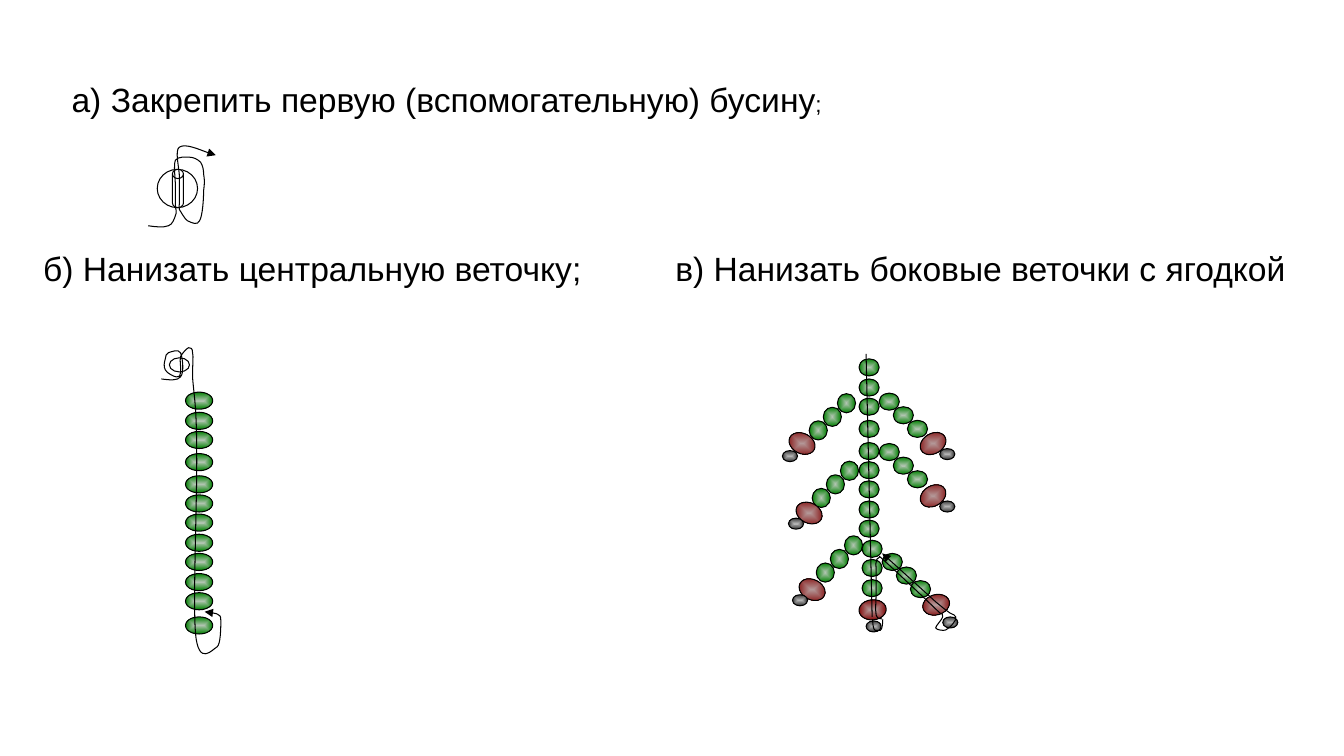
from lxml.etree import SubElement
from pptx import Presentation
from pptx.dml.color import RGBColor
from pptx.enum.shapes import MSO_CONNECTOR, MSO_SHAPE
from pptx.enum.text import MSO_ANCHOR, PP_ALIGN
from pptx.oxml.ns import qn
from pptx.util import Inches, Pt

BLACK, WHITE = "000000", "FFFFFF"
# Bead colours: rim, and tint of the centre in percent
GREEN, RED, GREY = ("008000", 57), ("800000", 70), ("333333", 57)

# Curves: a start point, then two control points and an end point per segment
FIRST_BEAD_WIRE = [
    (1.47, 2.24), (1.54, 2.25), (1.62, 2.26), (1.67, 2.24), (1.71, 2.23), (1.73, 2.17), (1.74, 2.14),
    (1.76, 2.1), (1.74, 2.08), (1.74, 2.03), (1.74, 1.98), (1.74, 1.91), (1.74, 1.84),
    (1.74, 1.77), (1.72, 1.64), (1.74, 1.59), (1.77, 1.55), (1.84, 1.56), (1.88, 1.56),
    (1.92, 1.56), (1.96, 1.58), (1.99, 1.61), (2.01, 1.64), (2.02, 1.68), (2.02, 1.73),
    (2.03, 1.78), (2.03, 1.82), (2.02, 1.89), (2.02, 1.97), (2.01, 2.14), (1.98, 2.19),
    (1.96, 2.24), (1.9, 2.21), (1.86, 2.19), (1.83, 2.17), (1.8, 2.11), (1.78, 2.08),
    (1.77, 2.05), (1.78, 2.05), (1.78, 2), (1.78, 1.95), (1.78, 1.85), (1.78, 1.76),
    (1.78, 1.67), (1.73, 1.49), (1.78, 1.46), (1.84, 1.42), (2.09, 1.53), (2.14, 1.54)]
CENTRAL_WIRE = [
    (1.6, 3.76), (1.68, 3.77), (1.76, 3.78), (1.79, 3.74), (1.83, 3.7), (1.81, 3.54), (1.79, 3.5),
    (1.77, 3.46), (1.7, 3.49), (1.67, 3.5), (1.65, 3.51), (1.64, 3.53), (1.64, 3.56),
    (1.63, 3.59), (1.62, 3.64), (1.64, 3.67), (1.65, 3.7), (1.73, 3.74), (1.75, 3.74),
    (1.78, 3.74), (1.79, 3.73), (1.79, 3.7), (1.8, 3.66), (1.78, 3.58), (1.79, 3.54),
    (1.81, 3.5), (1.85, 3.46), (1.87, 3.45), (1.89, 3.45), (1.91, 3.45), (1.91, 3.5),
    (1.92, 3.55), (1.91, 3.58), (1.91, 3.74), (1.92, 3.9), (1.95, 4.02), (1.95, 4.44),
    (1.96, 4.87), (1.91, 5.96), (1.94, 6.29), (1.97, 6.62), (2.11, 6.44), (2.15, 6.42),
    (2.19, 6.4), (2.19, 6.21), (2.19, 6.16), (2.19, 6.1), (2.18, 6.11), (2.15, 6.09),
    (2.12, 6.08), (2.04, 6.07), (2.03, 6.07)]
WIRE_TO_BRANCH = [
    (8.75, 6.14), (8.73, 6.14), (8.7, 6.14), (8.69, 6.1), (8.68, 6.05), (8.69, 5.96), (8.69, 5.88),
    (8.69, 5.81), (8.69, 5.69), (8.69, 5.64), (8.69, 5.59), (8.68, 5.59), (8.69, 5.58),
    (8.69, 5.56), (8.7, 5.53), (8.72, 5.53), (8.74, 5.53), (8.69, 5.49), (8.79, 5.58),
    (8.89, 5.67), (9.23, 5.99), (9.32, 6.08)]
WIRE_BACK = [
    (9.32, 6.08), (9.34, 6.09), (9.36, 6.09), (9.35, 6.12), (9.35, 6.14), (9.28, 6.21), (9.28, 6.23),
    (9.29, 6.25), (9.36, 6.26), (9.38, 6.25), (9.41, 6.24), (9.43, 6.21), (9.45, 6.19),
    (9.47, 6.16), (9.49, 6.14), (9.48, 6.12), (9.48, 6.1), (9.45, 6.1), (9.42, 6.08),
    (9.38, 6.05), (9.4, 6.07), (9.28, 5.97), (9.17, 5.87), (8.84, 5.57), (8.75, 5.49)]

# Heights of the stem beads below the top one
STEM_OFFSETS = [0, 0.2, 0.39, 0.61, 0.83, 1.02, 1.21, 1.41, 1.6, 1.8, 1.99, 2.19]

# First bead, berry, berry rotation and tip of each branch
RIGHT_BRANCHES = [
    ((8.72, 4.4), (9.12, 4.82), 328.3, (9.32, 4.97)),
    ((8.72, 3.9), (9.12, 4.3), 329.7, (9.32, 4.45)),
    ((8.75, 5.49), (9.15, 5.9), 343.6, (9.35, 6.12))]
LEFT_BRANCHES = [
    ((8.33, 4.58), (7.89, 4.99), 26.5, (7.82, 5.14)),
    ((8.3, 3.91), (7.82, 4.3), 26.5, (7.76, 4.47)),
    ((8.37, 5.32), (7.92, 5.75), 26.5, (7.86, 5.9))]


def color(value):
    return RGBColor.from_string(value)


class BeadSlide:
    def __init__(self, presentation):
        self.slide = presentation.slides.add_slide(presentation.slide_layouts[5])
        self.shapes = self.slide.shapes
        self.font, self.size, self.line_width = "Arial", Pt(24), Pt(0.75)

    def start_group(self):
        self.shapes = self.slide.shapes.add_group_shape().shapes

    def text(self, shape, box, runs, tab=None):
        shape.left, shape.top, shape.width, shape.height = map(Inches, box)
        frame = shape.text_frame
        frame.word_wrap = True
        frame.vertical_anchor = MSO_ANCHOR.MIDDLE
        paragraph = frame.paragraphs[0]
        paragraph.alignment = PP_ALIGN.LEFT
        for wording, size in runs:
            run = paragraph.add_run()
            run.text = wording
            run.font.name, run.font.size = self.font, size
            run.font.color.rgb = color(BLACK)
        if tab:
            tabs = SubElement(paragraph._p.get_or_add_pPr(), qn("a:tabLst"))
            SubElement(tabs, qn("a:tab"), pos=str(Inches(tab)), algn="l")

    def outline(self, shape):
        shape.line.color.rgb = color(BLACK)
        shape.line.width = self.line_width

    def shape(self, kind, left, top, width, height, fill=None, rotation=0, adjustment=None):
        shape = self.shapes.add_shape(kind, *map(Inches, (left, top, width, height)))
        shape.shadow.inherit = False
        shape.rotation = rotation
        self.outline(shape)
        if adjustment is not None:
            shape.adjustments[0] = adjustment
        if fill is None:
            shape.fill.background()
        elif isinstance(fill, str):
            shape.fill.solid()
            shape.fill.fore_color.rgb = color(fill)
        else:
            self.radial_fill(shape, *fill)

    def radial_fill(self, shape, rim, tint):
        shape.fill.gradient()
        for stop in shape.fill.gradient_stops:
            stop.color.rgb = color(rim)
        gradient = shape._element.spPr.find(qn("a:gradFill"))
        center = next(gradient.iter(qn("a:srgbClr")))
        SubElement(center, qn("a:tint"), val=str(tint * 1000))
        gradient.remove(gradient.find(qn("a:lin")))
        focus = SubElement(gradient, qn("a:path"), {"path": "shape"})
        SubElement(focus, qn("a:fillToRect"), l="50000", t="50000", r="50000", b="50000")

    def bead(self, left, top, width, height, fill, rotation=0):
        self.shape(MSO_SHAPE.OVAL, left, top, width, height, fill, rotation)

    def berry(self, position, rotation, tip):
        self.bead(*position, 0.27, 0.2, RED, rotation)
        self.bead(*tip, 0.15, 0.11, GREY)

    def branch(self, start, berry, rotation, tip, direction):
        width, height, turn = (0.2, 0.17, 0) if direction > 0 else (0.19, 0.18, 90)
        for index in range(3):
            self.bead(start[0] + direction * 0.14 * index, start[1] + 0.135 * index,
                      width, height, GREEN, turn)
        self.berry(berry, rotation, tip)

    def wire(self, points, arrow=True):
        start, *others = [(Inches(x), Inches(y)) for x, y in points]
        builder = self.shapes.build_freeform(*start, scale=1.0)
        builder.add_line_segments(others, close=False)
        shape = builder.convert_to_shape()
        shape.shadow.inherit = False
        shape.fill.background()
        self.outline(shape)
        properties = shape._element.spPr
        # Every three straight segments become one cubic curve
        outline = next(properties.iter(qn("a:path")))
        segments = outline.findall(qn("a:lnTo"))
        for index in range(0, len(segments), 3):
            curve = SubElement(outline, qn("a:cubicBezTo"))
            for segment in segments[index:index + 3]:
                curve.append(segment[0])
                outline.remove(segment)
        if arrow:
            SubElement(properties.find(qn("a:ln")), qn("a:tailEnd"), type="triangle")

    def line(self, *ends):
        connector = self.shapes.add_connector(MSO_CONNECTOR.STRAIGHT, *map(Inches, ends))
        self.outline(connector)
        SubElement(connector._element.spPr, qn("a:effectLst"))


def main():
    presentation = Presentation()
    presentation.slide_width, presentation.slide_height = Inches(13.33), Inches(7.5)
    page = BeadSlide(presentation)

    # Step а: first bead
    page.text(page.slide.shapes.title, (0.61, 0.72, 8.71, 0.52),
              [("а) Закрепить первую (вспомогательную) бусину", page.size), (";", Pt(16))])
    page.start_group()
    page.bead(1.56, 1.68, 0.4, 0.38, WHITE)
    page.shape(MSO_SHAPE.CAN, 1.71, 1.68, 0.11, 0.38, WHITE, adjustment=0.837)
    page.wire(FIRST_BEAD_WIRE)

    # Step б: central string
    page.start_group()
    for offset in STEM_OFFSETS[:-1] + [2.23]:
        page.bead(1.84, 3.89 + offset, 0.27, 0.17, GREEN)
    page.bead(1.68, 3.55, 0.2, 0.14, WHITE)
    page.shapes = page.slide.shapes
    page.wire(CENTRAL_WIRE)

    # Step в: side branches, then the stem
    page.start_group()
    for direction, branches in ((1, RIGHT_BRANCHES), (-1, LEFT_BRANCHES)):
        for branch in branches:
            page.branch(*branch, direction)
    for index, offset in enumerate(STEM_OFFSETS):
        page.bead(8.52 if index < 9 else 8.55, 3.56 + offset, 0.2, 0.17, GREEN)
    page.berry((8.52, 5.95), 355.3, (8.59, 6.16))
    page.line(8.59, 3.51, 8.65, 6.12)
    page.shape(MSO_SHAPE.RIGHT_BRACKET, 8.65, 6.15, 0.11, 0.1, rotation=90, adjustment=0.263)
    page.wire(WIRE_TO_BRANCH, arrow=False)
    page.wire(WIRE_BACK)

    # Captions of steps б and в
    captions = page.slide.shapes.add_textbox(0, 0, 0, 0)
    page.text(captions, (0.33, 2.42, 12.86, 0.48),
              [("б) Нанизать центральную веточку;\tв) Нанизать боковые веточки с ягодкой",
                page.size)], tab=6.27)

    presentation.save("out.pptx")


if __name__ == "__main__":
    main()
